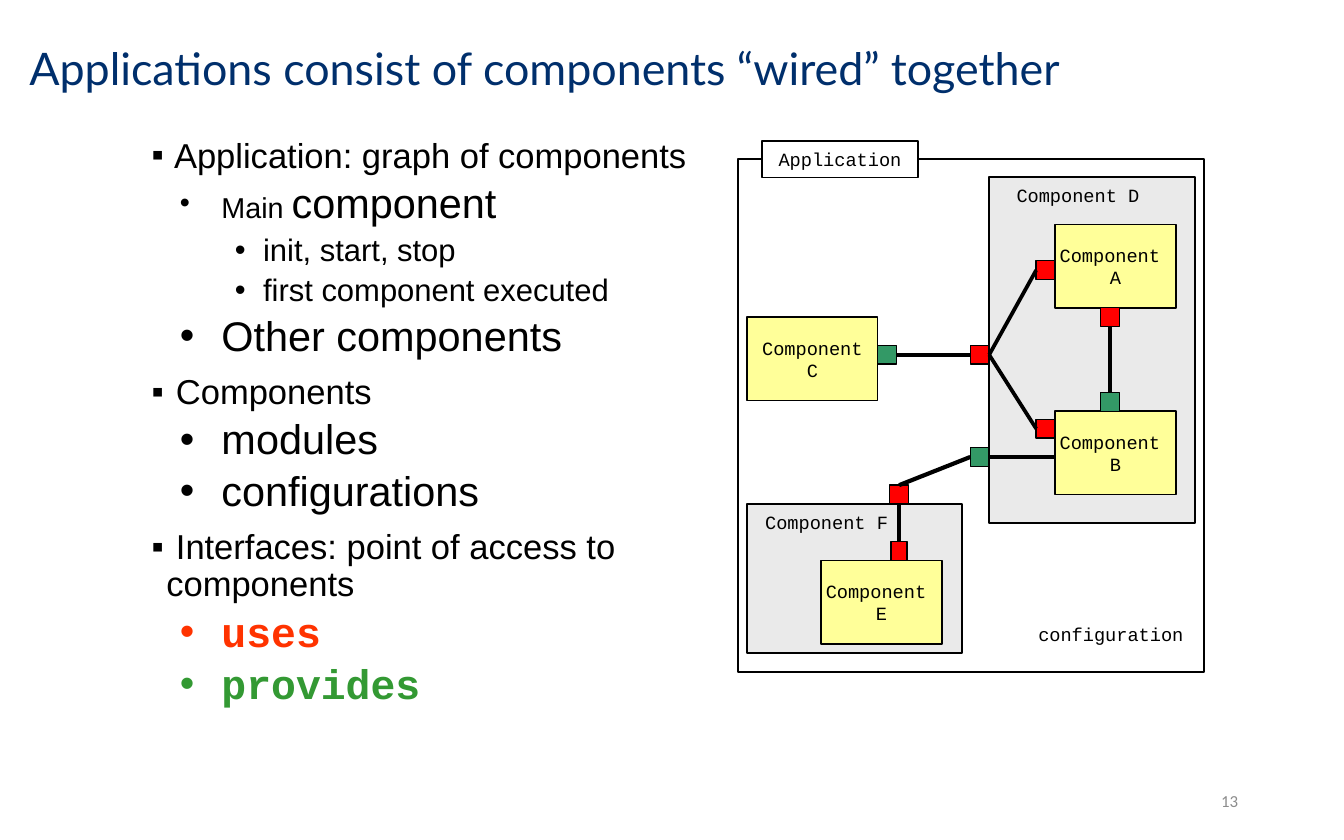
from lxml.etree import SubElement
from pptx import Presentation
from pptx.dml.color import RGBColor
from pptx.enum.shapes import MSO_CONNECTOR as Connector, MSO_SHAPE as Shape
from pptx.enum.text import MSO_ANCHOR as Anchor, PP_ALIGN as Align
from pptx.oxml.ns import qn
from pptx.util import Inches, Pt

COLORS = {
    "title": "002F6C", "black": "000000", "white": "FFFFFF", "group": "EAEAEA",
    "component": "FFFF99", "red": "FF0000", "green": "339966",
    "uses": "FF3300", "provides": "339933", "number": "8C8C8C",
}
CODE = {"name": "Courier New", "size": Pt(10)}
KEYWORD = {"name": "Courier New", "bold": True}
PORT = 0.14
TOP, LEFT, BOTTOM, RIGHT = range(4)

presentation = Presentation()
presentation.slide_width, presentation.slide_height = Inches(10), Inches(6.25)
slide = presentation.slides.add_slide(presentation.slide_layouts[6])


def add_box(box, fill=None, line=1):
    shape = slide.shapes.add_shape(Shape.RECTANGLE, *map(Inches, box))
    shape.shadow.inherit = False
    if fill:
        shape.fill.solid()
        shape.fill.fore_color.rgb = RGBColor.from_string(COLORS[fill])
    else:
        shape.fill.background()
    shape.line.color.rgb = RGBColor.from_string(COLORS["black"])
    shape.line.width = Pt(line)
    return shape


def write(shape, lines, font, color="black", align=Align.CENTER, **frame_format):
    frame = shape.text_frame
    for name, value in {"word_wrap": True, **frame_format}.items():
        setattr(frame, name, value)
    for index, line in enumerate(lines):
        paragraph = frame.add_paragraph() if index else frame.paragraphs[0]
        paragraph.alignment = align
        run = paragraph.add_run()
        run.text = line
        for name, value in font.items():
            setattr(run.font, name, value)
        run.font.color.rgb = RGBColor.from_string(COLORS[color])


title = slide.shapes.add_textbox(*map(Inches, (0.12, 0.1, 8.52, 0.86)))
write(title, ["Applications consist of components “wired” together"],
      {"name": "Lato", "size": Pt(24)}, "title", Align.LEFT, vertical_anchor=Anchor.MIDDLE)
title.text_frame.paragraphs[0].line_spacing = 0.9

LEVELS = [
    {"margin": 0.11, "hang": 0.11, "before": 7.5, "bullet": "▪", "size": 18.5},
    {"margin": 0.52, "hang": 0.31, "before": 3.8, "bullet": "•", "size": 22.2},
    {"margin": 0.83, "hang": 0.21, "before": 3.8, "bullet": "•", "size": 16.6},
]
OUTLINE = [
    (0, "black", [(" Application: graph of components", {})]),
    (1, "black", [("Main ", {"size": Pt(15.4)}), ("component", {})]),
    (2, "black", [("init, start, stop", {})]),
    (2, "black", [("first component executed", {})]),
    (1, "black", [("Other components", {})]),
    (0, "black", [(" Components", {})]),
    (1, "black", [("modules", {})]),
    (1, "black", [("configurations", {})]),
    (0, "black", [(" Interfaces: point of access to components", {})]),
    (1, "uses", [("uses", KEYWORD)]),
    (1, "provides", [("provides", KEYWORD)]),
]
body = slide.shapes.add_textbox(*map(Inches, (1.03, 0.98, 4.46, 4.76))).text_frame
body.word_wrap = True
for index, (level, color, runs) in enumerate(OUTLINE):
    style = LEVELS[level]
    paragraph = body.add_paragraph() if index else body.paragraphs[0]
    paragraph.level = level
    paragraph.line_spacing = 0.9
    paragraph.space_before = Pt(style["before"] if index else 0)
    properties = paragraph._p.get_or_add_pPr()
    properties.set("marL", str(Inches(style["margin"])))
    properties.set("indent", str(-Inches(style["hang"])))
    SubElement(properties, qn("a:buFont"), typeface="Arial")
    SubElement(properties, qn("a:buChar"), char=style["bullet"])
    for text, run_format in runs:
        run = paragraph.add_run()
        run.text = text
        for name, value in {"name": "Arial", "size": Pt(style["size"]), **run_format}.items():
            setattr(run.font, name, value)
        run.font.color.rgb = RGBColor.from_string(COLORS[color])

add_box((7.36, 1.32, 1.53, 2.57), "group")
add_box((5.49, 1.18, 3.47, 3.82))
add_box((5.56, 3.75, 1.6, 1.11), "group")

for left, top, width, lines in [
    (7.85, 1.67, 0.9, ["Component ", "A"]),
    (7.85, 3.06, 0.9, ["Component ", "B"]),
    (5.56, 2.36, 0.97, ["Component", "C"]),
    (6.11, 4.17, 0.9, ["Component ", "E"]),
]:
    component = add_box((left, top, width, 0.62), "component")
    write(component, lines, CODE, word_wrap=False, vertical_anchor=Anchor.MIDDLE)

application = add_box((5.67, 1.05, 1.16, 0.27), "white", 0.75)
write(application, ["Application"], CODE, margin_left=0, margin_right=0,
      vertical_anchor=Anchor.TOP)

ports = {}
for name, left, top, width, color in [
    ("A bottom", 8.19, 2.29, PORT, "red"),
    ("B top", 8.19, 2.92, PORT, "green"),
    ("A left", 7.71, 1.94, PORT, "red"),
    ("B left", 7.71, 3.12, PORT, "red"),
    ("D uses", 7.22, 2.57, PORT, "red"),
    ("D provides", 7.22, 3.33, PORT, "green"),
    ("E top", 6.63, 4.03, 0.12, "red"),
    ("F top", 6.62, 3.61, PORT, "red"),
    ("C right", 6.53, 2.57, PORT, "green"),
]:
    ports[name] = add_box((left, top, width, PORT), color, 0.75)

for text, box, anchor in [
    ("Component D", (7.29, 1.32, 1.46, 0.27), Anchor.TOP),
    ("Component F", (5.56, 3.75, 1.18, 0.27), Anchor.TOP),
    ("configuration", (7.71, 4.54, 1.11, 0.35), Anchor.MIDDLE),
]:
    label = slide.shapes.add_textbox(*map(Inches, box))
    write(label, [text], CODE, word_wrap=False, margin_left=0, margin_right=0,
          vertical_anchor=anchor)

for start, start_side, end, end_side, width in [
    ("A bottom", BOTTOM, "B top", TOP, 2),
    ("A left", LEFT, "D uses", RIGHT, 2),
    ("D uses", RIGHT, "B left", LEFT, 2),
    ("D provides", RIGHT, None, None, 2),
    ("F top", TOP, "D provides", LEFT, 2.25),
    ("F top", BOTTOM, "E top", TOP, 2.25),
    ("C right", RIGHT, "D uses", LEFT, 2.25),
]:
    wire = slide.shapes.add_connector(
        Connector.STRAIGHT, *map(Inches, (7.36, 3.4, 7.85, 3.4)))
    wire.begin_connect(ports[start], start_side)
    if end:
        wire.end_connect(ports[end], end_side)
    wire.line.color.rgb = RGBColor.from_string(COLORS["black"])
    wire.line.width = Pt(width)
    SubElement(wire._element.spPr, qn("a:effectLst"))

number = slide.shapes.add_textbox(*map(Inches, (7.06, 5.79, 2.25, 0.33)))
write(number, ["13"], {"name": "Calibri", "size": Pt(9)}, "number", Align.RIGHT,
      vertical_anchor=Anchor.MIDDLE)

presentation.save("out.pptx")
